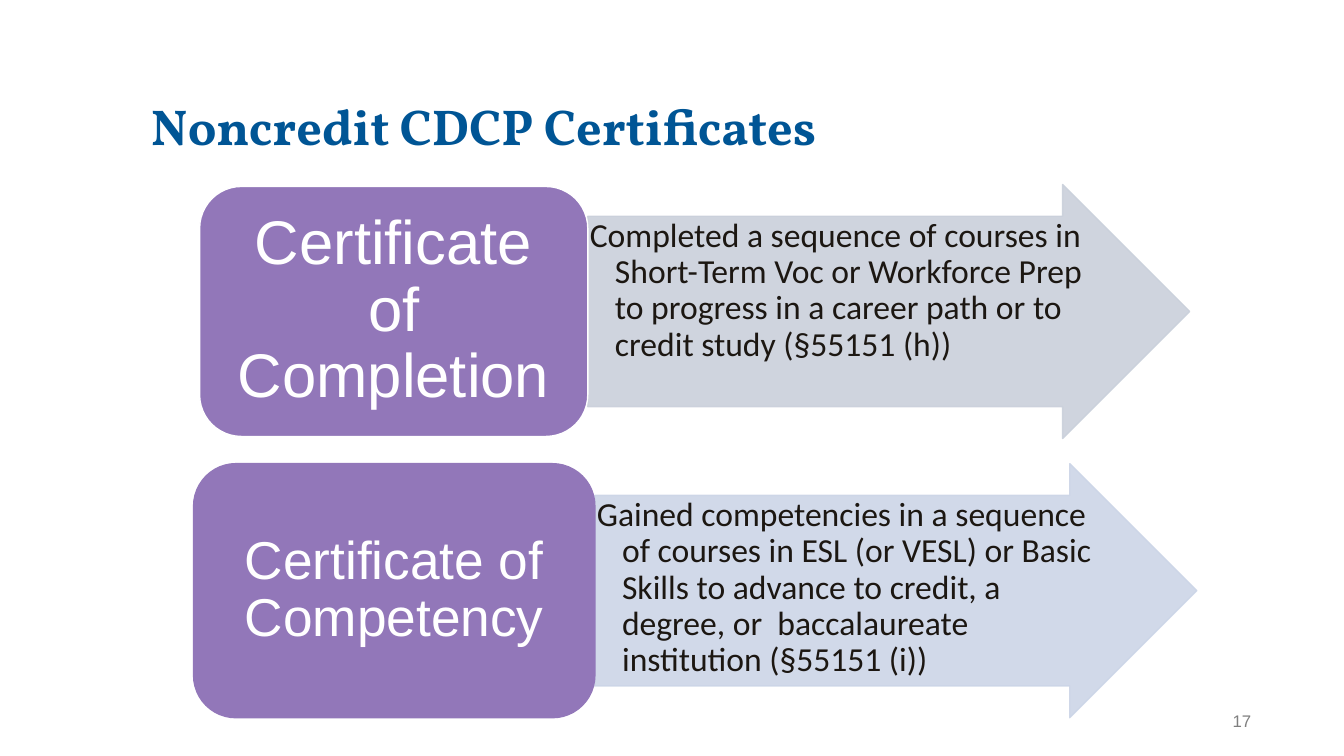
from lxml.etree import SubElement
from pptx import Presentation
from pptx.dml.color import RGBColor
from pptx.enum.shapes import MSO_SHAPE
from pptx.enum.text import MSO_ANCHOR, PP_ALIGN
from pptx.oxml.ns import qn
from pptx.util import Inches, Pt

WHITE = RGBColor(0xFF, 0xFF, 0xFF)
BLUE = RGBColor(0x00, 0x55, 0x95)
PURPLE = RGBColor(0x92, 0x77, 0xB9)
GREY_BLUE = RGBColor(0xCA, 0xD0, 0xDB)
PALE_BLUE = RGBColor(0xCC, 0xD5, 0xE7)
INK = RGBColor(0x1C, 0x17, 0x12)
GREY = RGBColor(0x7F, 0x7F, 0x7F)


class CertificateSlide:
    heading_font = "Vollkorn"
    label_font = "Arial"
    body_font = "Calibri"
    line_spacing = 0.9

    def __init__(self, presentation):
        self.slide = presentation.slides.add_slide(presentation.slide_layouts[5])

    def style_paragraph(self, paragraph, font_name, size, color, alignment):
        paragraph.alignment = alignment
        paragraph.line_spacing = self.line_spacing
        paragraph.font.name = font_name
        paragraph.font.size = Pt(size)
        paragraph.font.color.rgb = color

    def set_frame(self, frame, anchor, left, top, right, bottom):
        frame.word_wrap = True
        frame.vertical_anchor = anchor
        frame.margin_left, frame.margin_top = Inches(left), Inches(top)
        frame.margin_right, frame.margin_bottom = Inches(right), Inches(bottom)

    def add_title(self, text):
        title = self.slide.shapes.title
        title.left, title.top = Inches(1.4), Inches(0.4)
        title.width, title.height = Inches(10.99), Inches(1.2)
        self.set_frame(title.text_frame, MSO_ANCHOR.BOTTOM, 0.1, 0.05, 0.1, 0.05)
        title.text_frame.text = text
        paragraph = title.text_frame.paragraphs[0]
        self.style_paragraph(paragraph, self.heading_font, 36, BLUE, PP_ALIGN.LEFT)
        paragraph.font.bold = True

    def add_block(self, kind, left, top, width, height, fill, line):
        shape = self.slide.shapes.add_shape(
            kind, Inches(left), Inches(top), Inches(width), Inches(height))
        shape.shadow.inherit = False
        shape.fill.solid()
        shape.fill.fore_color.rgb = fill
        shape.line.color.rgb = line
        shape.line.width = Pt(1)
        return shape

    def add_arrow(self, left, top, color, text):
        """Add a slightly transparent arrow with a hanging-indent description."""
        arrow = self.add_block(
            MSO_SHAPE.RIGHT_ARROW, left, top, 5.97, 2.52, color, color)
        arrow.adjustments[0] = 0.75
        arrow.adjustments[1] = 0.5
        for color_element in arrow._element.spPr.iter(qn("a:srgbClr")):
            SubElement(color_element, qn("a:alpha"), val="90000")
        frame = arrow.text_frame
        self.set_frame(frame, MSO_ANCHOR.TOP, 0.02, 0.02, 0.02, 0.02)
        frame.text = text
        paragraph = frame.paragraphs[0]
        properties = paragraph._p.get_or_add_pPr()
        properties.set("marL", str(Inches(0.25)))
        properties.set("indent", str(Inches(-0.25)))
        self.style_paragraph(paragraph, self.body_font, 24, INK, PP_ALIGN.LEFT)

    def add_label(self, left, top, width, height, line, text, size, margin):
        label = self.add_block(
            MSO_SHAPE.ROUNDED_RECTANGLE, left, top, width, height, PURPLE, line)
        label.adjustments[0] = 0.167
        self.set_frame(label.text_frame, MSO_ANCHOR.MIDDLE,
                       margin, margin / 2, margin, margin / 2)
        label.text_frame.text = text
        self.style_paragraph(label.text_frame.paragraphs[0],
                             self.label_font, size, WHITE, PP_ALIGN.CENTER)

    def add_slide_number(self, number):
        box = self.slide.shapes.add_textbox(
            Inches(11.41), Inches(6.95), Inches(1), Inches(0.4))
        self.set_frame(box.text_frame, MSO_ANCHOR.MIDDLE, 0.1, 0.05, 0, 0.05)
        paragraph = box.text_frame.paragraphs[0]
        paragraph.text = number
        self.style_paragraph(paragraph, self.label_font, 12, GREY, PP_ALIGN.RIGHT)
        paragraph.line_spacing = 1.0


def main():
    presentation = Presentation()
    presentation.slide_width = Inches(13.33)
    presentation.slide_height = Inches(7.5)

    slide = CertificateSlide(presentation)
    slide.add_title("Noncredit CDCP Certificates")
    slide.add_slide_number("17")

    slide.add_arrow(
        5.83, 1.83, GREY_BLUE,
        "Completed a sequence of courses in Short-Term Voc or Workforce Prep "
        "to progress in a career path or to credit study (§55151 (h))")
    slide.add_label(1.98, 1.85, 3.85, 2.48, WHITE,
                    "Certificate of Completion", 44, 0.18)

    slide.add_arrow(
        5.9, 4.6, PALE_BLUE,
        "Gained competencies in a sequence of courses in ESL (or VESL) or "
        "Basic Skills to advance to credit, a degree, or  baccalaureate "
        "institution (§55151 (i))")
    slide.add_label(1.92, 4.6, 3.98, 2.52, PURPLE,
                    "Certificate of Competency", 38, 0.16)

    presentation.save("out.pptx")


if __name__ == "__main__":
    main()
